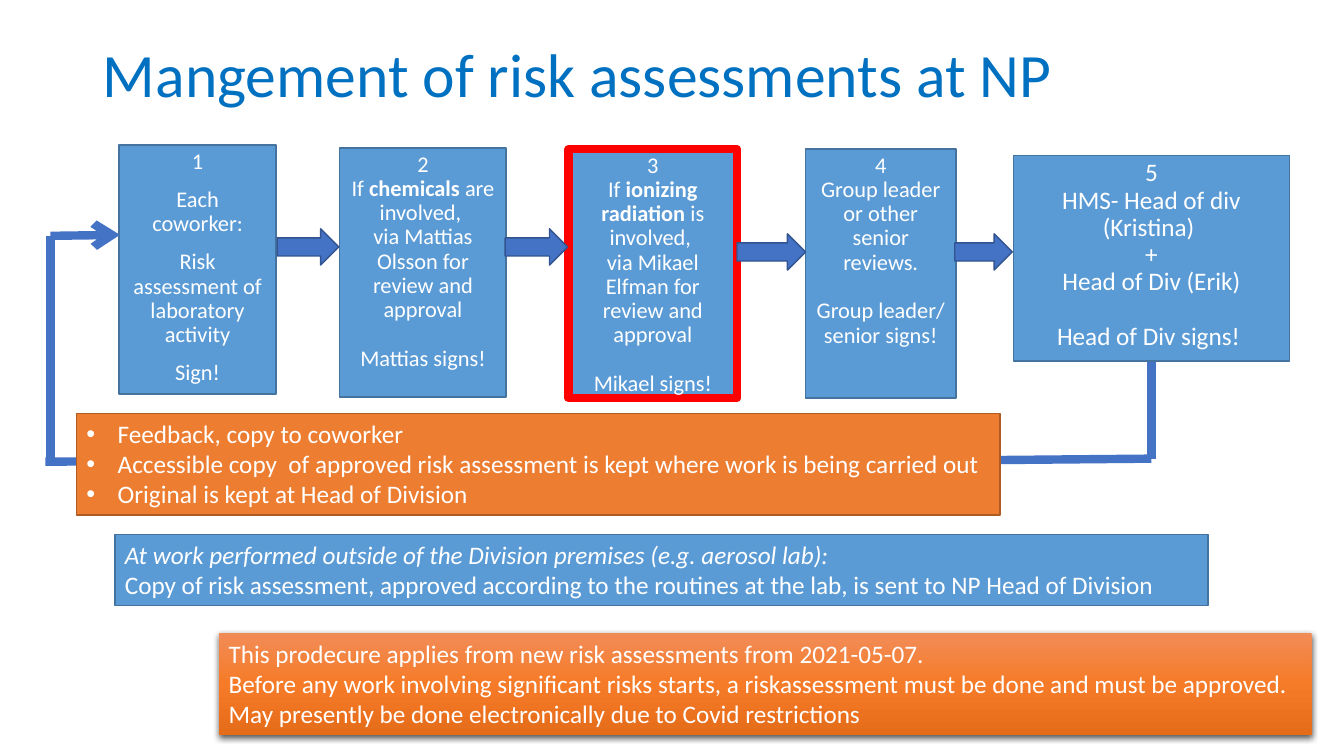
from lxml import etree
from pptx import Presentation
from pptx.dml.color import RGBColor
from pptx.enum.shapes import MSO_CONNECTOR, MSO_SHAPE
from pptx.enum.text import MSO_ANCHOR, PP_ALIGN
from pptx.oxml import parse_xml
from pptx.oxml.ns import nsdecls, qn
from pptx.util import Inches, Pt

RECT, ARROW = MSO_SHAPE.RECTANGLE, MSO_SHAPE.RIGHT_ARROW
STRAIGHT = MSO_CONNECTOR.STRAIGHT
LEFT, CENTER = PP_ALIGN.LEFT, PP_ALIGN.CENTER
TOP, MIDDLE = MSO_ANCHOR.TOP, MSO_ANCHOR.MIDDLE
FONT = "Calibri"
COLORS = {
    "title": "0070C0", "text": "FFFFFF",
    "step": "5B9BD5", "step_edge": "43739E", "alert": "FF0000",
    "flow": "4472C4", "flow_edge": "325491",
    "note": "ED7D31", "note_edge": "AF5C24",
    "grad_top": "F18C57", "grad_mid": "F67B28", "grad_end": "E56C19",
    "shadow": "000000",
}


def add_box(kind, place, fill, edge, width=1):
    box = page.shapes.add_shape(kind, *[Inches(v) for v in place])
    box.shadow.inherit = False
    box.fill.solid()
    box.fill.fore_color.rgb = RGBColor.from_string(COLORS[fill])
    box.line.color.rgb = RGBColor.from_string(COLORS[edge])
    box.line.width = Pt(width)
    return box


def write(shape, paragraphs, size, align=LEFT, spacing=1.0, anchor=TOP, color="text"):
    """Each paragraph is (space before, [(text, style), ...])."""
    frame = shape.text_frame
    frame.word_wrap = True
    frame.vertical_anchor = anchor
    for index, (before, runs) in enumerate(paragraphs):
        para = frame.paragraphs[0] if index == 0 else frame.add_paragraph()
        para.alignment = align
        para.line_spacing = spacing
        para.space_before = Pt(before)
        for text, style in runs:
            span = para.add_run()
            span.text = text
            span.font.name = FONT
            span.font.size = Pt(size)
            span.font.bold = style == "bold"
            span.font.italic = style == "italic"
            span.font.color.rgb = RGBColor.from_string(COLORS[color])


deck = Presentation()
deck.slide_width, deck.slide_height = Inches(13.33), Inches(7.5)
page = deck.slides.add_slide(deck.slide_layouts[5])

# Title
title = page.shapes.title
title.left, title.top = Inches(0.92), Inches(0.04)
title.width, title.height = Inches(11.5), Inches(1.45)
write(title, [(0, [("Mangement of risk assessments at NP", "")])],
      44, spacing=0.9, anchor=MIDDLE, color="title")

# Five steps: place, edge, edge width, text size, paragraphs
steps = [
    ((1.18, 1.44, 1.56, 2.47), "step_edge", 1, 16, [
        (10, [("1", "")]),
        (10, [("Each coworker:", "")]),
        (10, [("Risk assessment of laboratory activity", "")]),
        (10, [("Sign!", "")])]),
    ((3.37, 1.47, 1.65, 2.47), "step_edge", 1, 16, [
        (0, [("2", "")]),
        (0, [("If ", ""), ("chemicals ", "bold"), ("are involved, ", "")]),
        (0, [("via Mattias Olsson for review and approval", "")]),
        (17.6, [("Mattias signs!", "")])]),
    ((5.64, 1.48, 1.67, 2.47), "alert", 6, 16, [
        (0, [("3", "")]),
        (0, [("If ", ""), ("ionizing radiation ", "bold"), ("is involved, ", "")]),
        (0, [("via Mikael Elfman for review and approval", "")]),
        (17.6, [("Mikael signs!", "")])]),
    ((7.99, 1.48, 1.49, 2.47), "step_edge", 1, 16, [
        (0, [("4", "")]),
        (0, [("Group leader or other senior reviews.", "")]),
        (17.6, [("Group leader/ senior signs!", "")])]),
    ((10.05, 1.54, 2.74, 2.04), "step_edge", 1, 18, [
        (0, [("5", "")]),
        (0, [("HMS- Head of div (Kristina) ", "")]),
        (0, [("+", "")]),
        (0, [("Head of Div (Erik)", "")]),
        (19.8, [("Head of Div signs! ", "")])]),
]
for place, edge, width, size, paragraphs in steps:
    box = add_box(RECT, place, "step", edge, width)
    write(box, paragraphs, size, CENTER, 0.9)

# Arrows between the steps
for left, top, width in [(2.75, 2.27, 0.61), (5.01, 2.27, 0.62),
                         (7.31, 2.32, 0.68), (9.47, 2.32, 0.57)]:
    add_box(ARROW, (left, top, width, 0.36), "flow", "flow_edge")

# Feedback loop from step 5 back to step 1
loop = [
    (11.42, 4.55, 11.42, 3.59),
    (11.42, 4.55, 8.14, 4.58),
    (4.29, 4.56, 0.45, 4.58),
    (0.5, 4.56, 0.5, 2.34),
    (0.5, 2.34, 1.19, 2.33),
]
for ends in loop:
    link = page.shapes.add_connector(STRAIGHT, *[Inches(v) for v in ends])
    link.line.color.rgb = RGBColor.from_string(COLORS["flow"])
    link.line.width = Pt(6)
    etree.SubElement(link._element.spPr, qn("a:effectLst"))
# The last link carries the arrowhead
etree.SubElement(link.line._get_or_add_ln(), qn("a:tailEnd"), type="arrow")

# Feedback note with bullets
feedback = add_box(RECT, (0.76, 4.1, 9.16, 1.01), "note", "note_edge")
write(feedback, [
    (0, [("Feedback, copy to coworker", "")]),
    (0, [("Accessible copy  of approved risk assessment is kept "
          "where work is being carried out", "")]),
    (0, [("Original is kept at Head of Division", "")])], 18)
for para in feedback.text_frame.paragraphs:
    props = para._p.get_or_add_pPr()
    props.set("marL", str(Inches(0.31)))
    props.set("indent", str(-Inches(0.31)))
    etree.SubElement(props, qn("a:buFont"), typeface="Arial")
    etree.SubElement(props, qn("a:buChar"), char="•")

# Note on work outside the premises
outside = add_box(RECT, (1.14, 5.3, 10.84, 0.71), "step", "step_edge")
write(outside, [
    (0, [("At work performed outside of the Division premises (e.g. aerosol lab):",
          "italic")]),
    (0, [("Copy of risk assessment, approved according to the routines at the lab, "
          "is sent to NP Head of Division", "")])], 18)

# Validity note with gradient and shadow
validity = add_box(RECT, (2.17, 6.28, 10.84, 1.01), "note", "note_edge")
validity.line.fill.background()
write(validity, [
    (0, [("This prodecure applies from new risk assessments from 2021-05-07.", "")]),
    (0, [("Before any work involving significant risks starts, "
          "a riskassessment must be done and must be approved.", "")]),
    (0, [("May presently be done electronically due to Covid restrictions", "")])], 18)
stops = "".join(
    f'<a:gs pos="{pos}"><a:srgbClr val="{COLORS[name]}"/></a:gs>'
    for pos, name in [(0, "grad_top"), (50000, "grad_mid"), (100000, "grad_end")])
gradient = parse_xml(
    f'<a:gradFill {nsdecls("a")} rotWithShape="1"><a:gsLst>{stops}</a:gsLst>'
    '<a:lin ang="5400000" scaled="0"/></a:gradFill>')
look = validity._element.spPr
look.replace(look.find(qn("a:solidFill")), gradient)
look.find(qn("a:effectLst")).append(parse_xml(
    f'<a:outerShdw {nsdecls("a")} blurRad="{Pt(4.5)}" dist="{Pt(1.5)}" dir="5400000" '
    f'algn="ctr" rotWithShape="0"><a:srgbClr val="{COLORS["shadow"]}">'
    '<a:alpha val="63000"/></a:srgbClr></a:outerShdw>'))

deck.save("out.pptx")
